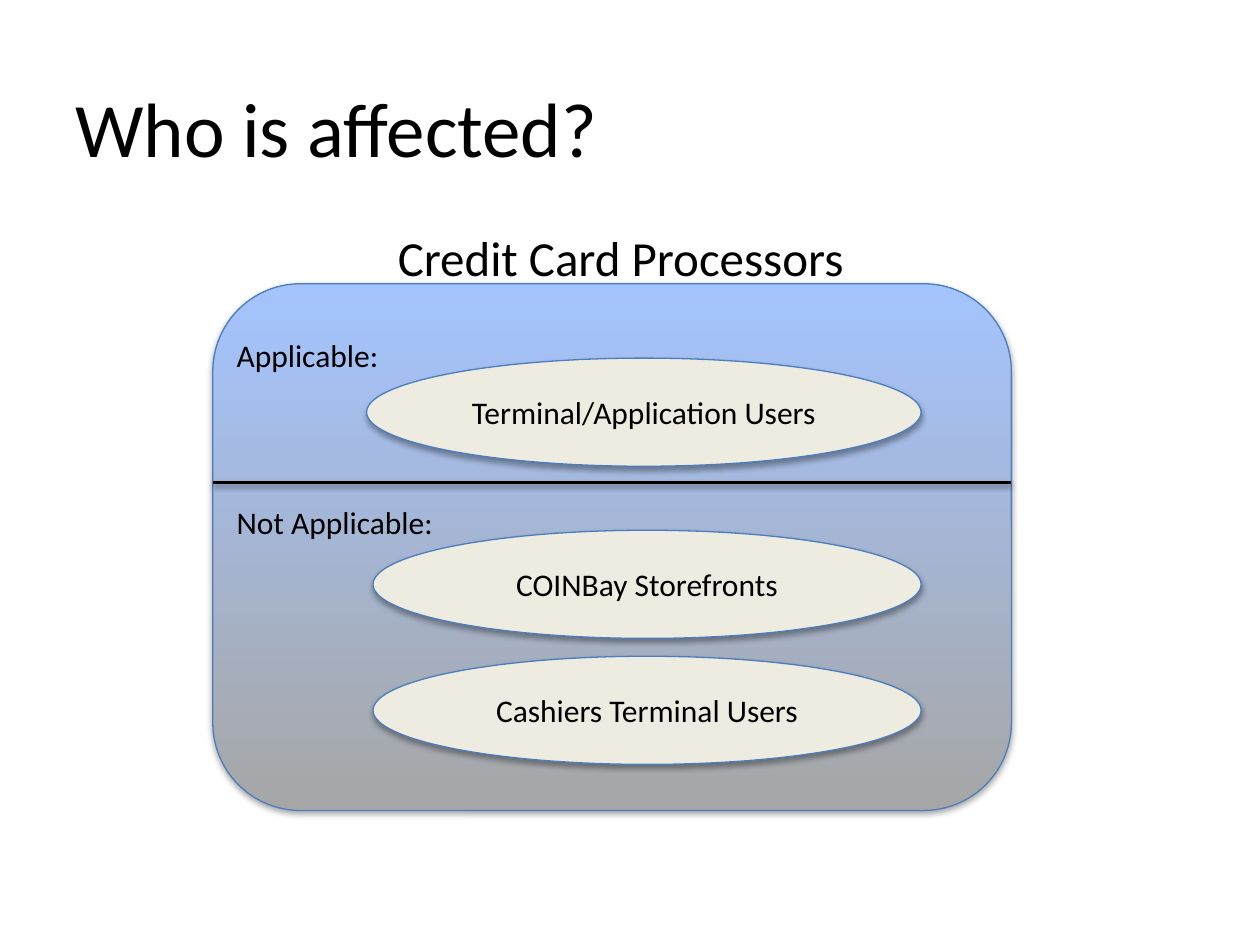
from lxml.etree import SubElement
from pptx import Presentation
from pptx.dml.color import RGBColor
from pptx.enum.shapes import MSO_CONNECTOR as Connector, MSO_SHAPE as Shape
from pptx.enum.text import MSO_ANCHOR as Anchor, PP_ALIGN as Align
from pptx.oxml.ns import qn
from pptx.util import Cm, Pt

COLORS = {
    "text": "000000",
    "outline": "4B7EBC",
    "oval": "EEECE1",
    "panel_top": "A4C4FF",
    "panel_bottom": "A6A6A6",
}


def color(name):
    return RGBColor.from_string(COLORS[name])


def add_shadow(item, opacity, distance):
    """Add a soft black shadow below; call it after fill and line are set."""
    effects = SubElement(item.element.spPr, qn("a:effectLst"))
    shadow = SubElement(effects, qn("a:outerShdw"), blurRad=str(Pt(3.1)),
                        dist=str(Pt(distance)), dir="5400000", rotWithShape="0")
    black = SubElement(shadow, qn("a:srgbClr"), val="000000")
    SubElement(black, qn("a:alpha"), val=str(opacity * 1000))


deck = Presentation()
deck.slide_width, deck.slide_height = Cm(25.4), Cm(19.05)
page = deck.slides.add_slide(deck.slide_layouts[6])

# Panel holding both groups
panel_left, panel_width = Cm(4.29), Cm(16.1)
panel = page.shapes.add_shape(Shape.ROUNDED_RECTANGLE, panel_left, Cm(5.72),
                              panel_width, Cm(10.62))
panel.fill.gradient()
panel.fill.gradient_angle = 90
for stop, name in zip(panel.fill.gradient_stops, ("panel_bottom", "panel_top")):
    stop.color.rgb = color(name)
panel.line.color.rgb = color("outline")
panel.line.width = Pt(0.75)
add_shadow(panel, 35, 1.8)

# Divider between applicable and not applicable
divider_top = Cm(9.73)
divider = page.shapes.add_connector(Connector.STRAIGHT, panel_left, divider_top,
                                    panel_left + panel_width, divider_top)
divider.line.color.rgb = color("text")
divider.line.width = Pt(2)
add_shadow(divider, 38, 1.6)

# Ovals share their right edge
oval_right = Cm(18.57)
ovals = [
    ("Terminal/Application Users", 7.22, 11.18),
    ("COINBay Storefronts", 10.69, 11.05),
    ("Cashiers Terminal Users", 13.23, 11.05),
]
for text, top, width in ovals:
    oval = page.shapes.add_shape(Shape.OVAL, oval_right - Cm(width), Cm(top),
                                 Cm(width), Cm(2.18))
    oval.fill.solid()
    oval.fill.fore_color.rgb = color("oval")
    oval.line.color.rgb = color("outline")
    oval.line.width = Pt(0.75)
    add_shadow(oval, 35, 1.8)
    oval.text_frame.text = text
    oval.text_frame.vertical_anchor = Anchor.MIDDLE
    para = oval.text_frame.paragraphs[0]
    para.alignment = Align.CENTER
    font = para.runs[0].font
    font.name, font.size = "Calibri", Pt(18)
    font.color.rgb = color("text")

# Title, heading and group labels
labels = [
    ("Who is affected?", 1.27, 0.97, 22.86, 3.18, 44, Anchor.MIDDLE),
    ("Credit Card Processors", 7.77, 4.47, 10.52, 1.45, 28, Anchor.TOP),
    ("Applicable:", 4.52, 6.65, 7.47, 1.02, 18, Anchor.TOP),
    ("Not Applicable:", 4.52, 10.01, 7.47, 1.02, 18, Anchor.TOP),
]
for text, left, top, width, height, size, anchor in labels:
    box = page.shapes.add_textbox(Cm(left), Cm(top), Cm(width), Cm(height))
    box.text_frame.word_wrap = True
    box.text_frame.vertical_anchor = anchor
    box.text_frame.text = text
    font = box.text_frame.paragraphs[0].runs[0].font
    font.name, font.size = "Calibri", Pt(size)
    font.color.rgb = color("text")

deck.save("out.pptx")
